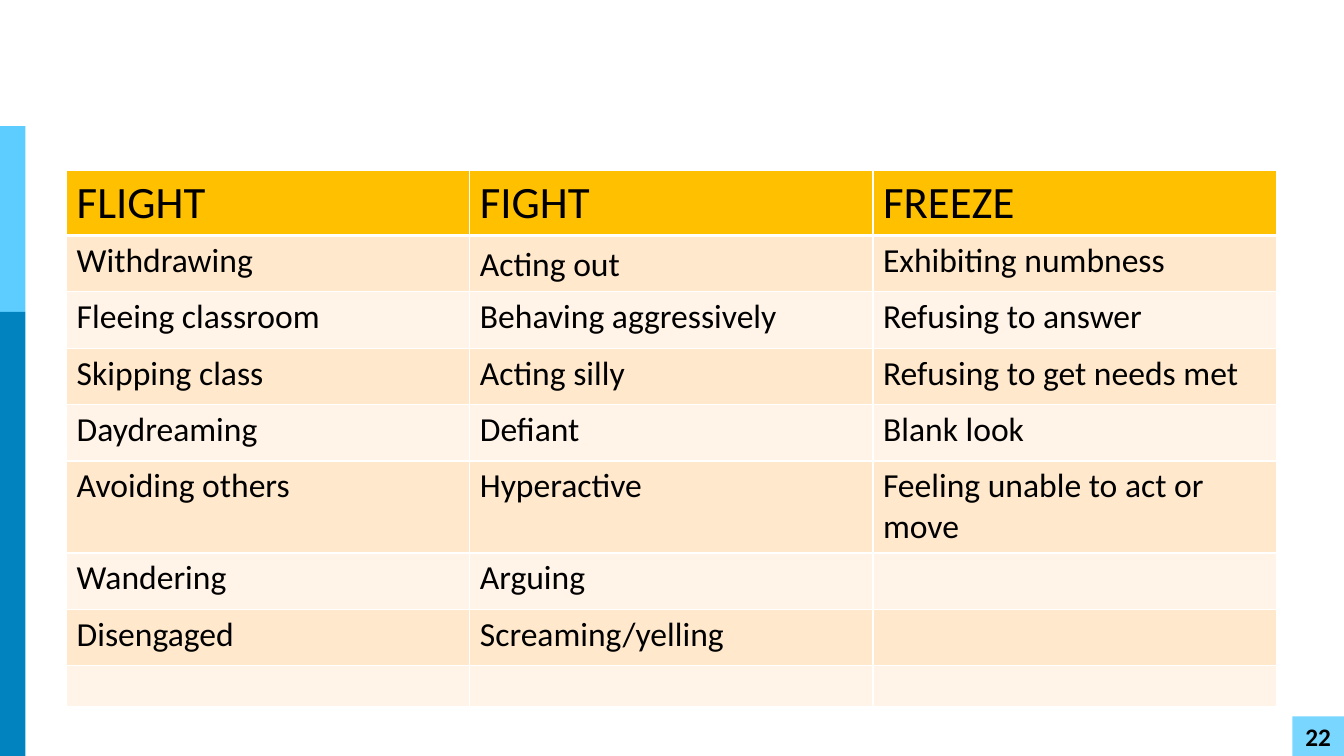
"""Build the slide that lists flight, fight and freeze behaviours."""
from dataclasses import dataclass

from lxml.etree import SubElement
from pptx import Presentation
from pptx.dml.color import RGBColor
from pptx.dml.fill import FillFormat
from pptx.enum.shapes import MSO_SHAPE
from pptx.enum.text import MSO_ANCHOR, PP_ALIGN
from pptx.oxml.ns import qn
from pptx.slide import Slide
from pptx.table import _Cell
from pptx.text.text import _Paragraph
from pptx.util import Cm, Pt

FONT = "Calibri"
BLACK, WHITE = "000000", "FFFFFF"
HEADER_FILL = "FFC000"
BAND_FILLS = ("FFE8CC", "FFF4E7")
COLUMN_WIDTH = 10.16
ROW_HEIGHTS = (1.5, 1.42, 1.42, 1.42, 1.42, 2.13, 1.42, 1.42, 0.97)
BEHAVIOURS = (
    ("FLIGHT", "FIGHT", "FREEZE"),
    ("Withdrawing", "Acting out", "Exhibiting numbness"),
    ("Fleeing classroom", "Behaving aggressively", "Refusing to answer"),
    ("Skipping class", "Acting silly", "Refusing to get needs met"),
    ("Daydreaming", "Defiant", "Blank look"),
    ("Avoiding others", "Hyperactive", "Feeling unable to act or move"),
    ("Wandering", "Arguing", ""),
    ("Disengaged", "Screaming/yelling", ""),
    ("", "", ""),
)


@dataclass(frozen=True)
class Block:
    """A plain coloured rectangle, measured in centimetres."""

    left: float
    top: float
    width: float
    height: float
    colour: str
    label: str = ""


BLOCKS = (
    Block(0, 3.18, 0.64, 4.68, "5DCDFF"),
    Block(0, 7.86, 0.64, 11.19, "0083BF"),
    Block(32.57, 18.05, 1.3, 1, "79D6FF", "22"),
)


def rgb(colour: str) -> RGBColor:
    """Turn a hex string into a colour."""
    return RGBColor.from_string(colour)


def paint(fill: FillFormat, colour: str) -> None:
    """Give a fill one solid colour."""
    fill.solid()
    fill.fore_color.rgb = rgb(colour)


def write(paragraph: _Paragraph, text: str, size: float, bold: bool = False) -> None:
    """Put black text into a paragraph."""
    paragraph.text = text
    paragraph.font.name = FONT
    paragraph.font.size = Pt(size)
    paragraph.font.bold = bold
    paragraph.font.color.rgb = rgb(BLACK)


def draw_block(slide: Slide, block: Block) -> None:
    """Draw a rectangle with its label, if it has one."""
    rectangle = slide.shapes.add_shape(
        MSO_SHAPE.RECTANGLE, Cm(block.left), Cm(block.top), Cm(block.width), Cm(block.height)
    )
    rectangle.shadow.inherit = False
    paint(rectangle.fill, block.colour)
    rectangle.line.fill.background()
    if block.label:
        frame = rectangle.text_frame
        frame.margin_left = frame.margin_right = frame.margin_top = frame.margin_bottom = 0
        frame.vertical_anchor = MSO_ANCHOR.MIDDLE
        write(frame.paragraphs[0], block.label, 18, bold=True)
        frame.paragraphs[0].alignment = PP_ALIGN.CENTER


def add_borders(cell: _Cell, bottom_width: float) -> None:
    """Outline a cell in white, ahead of its fill in the XML."""
    properties = cell._tc.get_or_add_tcPr()
    widths = {"a:lnL": 1, "a:lnR": 1, "a:lnT": 1, "a:lnB": bottom_width}
    for side, width in widths.items():
        border = SubElement(properties, qn(side), w=str(Pt(width)))
        solid = SubElement(border, qn("a:solidFill"))
        SubElement(solid, qn("a:srgbClr"), val=WHITE)


def draw_behaviours(slide: Slide) -> None:
    """Draw the table with its header and banded rows."""
    columns = len(BEHAVIOURS[0])
    table = slide.shapes.add_table(
        len(BEHAVIOURS), columns, Cm(1.68), Cm(4.3),
        Cm(columns * COLUMN_WIDTH), Cm(sum(ROW_HEIGHTS)),
    ).table
    table.first_row = table.horz_banding = False
    for column in table.columns:
        column.width = Cm(COLUMN_WIDTH)
    for row_index, texts in enumerate(BEHAVIOURS):
        is_header = row_index == 0
        table.rows[row_index].height = Cm(ROW_HEIGHTS[row_index])
        for column_index, text in enumerate(texts):
            cell = table.cell(row_index, column_index)
            add_borders(cell, 3 if is_header else 1)
            paint(cell.fill, HEADER_FILL if is_header else BAND_FILLS[(row_index - 1) % 2])
            if text:
                write(cell.text_frame.paragraphs[0], text, 32 if is_header else 24)
    table.cell(1, 1).text_frame.paragraphs[0].line_spacing = 1.1


def main() -> None:
    """Build and save the presentation."""
    presentation = Presentation()
    presentation.slide_width = Cm(33.87)
    presentation.slide_height = Cm(19.05)
    slide = presentation.slides.add_slide(presentation.slide_layouts[6])
    for block in BLOCKS:
        draw_block(slide, block)
    draw_behaviours(slide)
    presentation.save("out.pptx")


if __name__ == "__main__":
    main()
